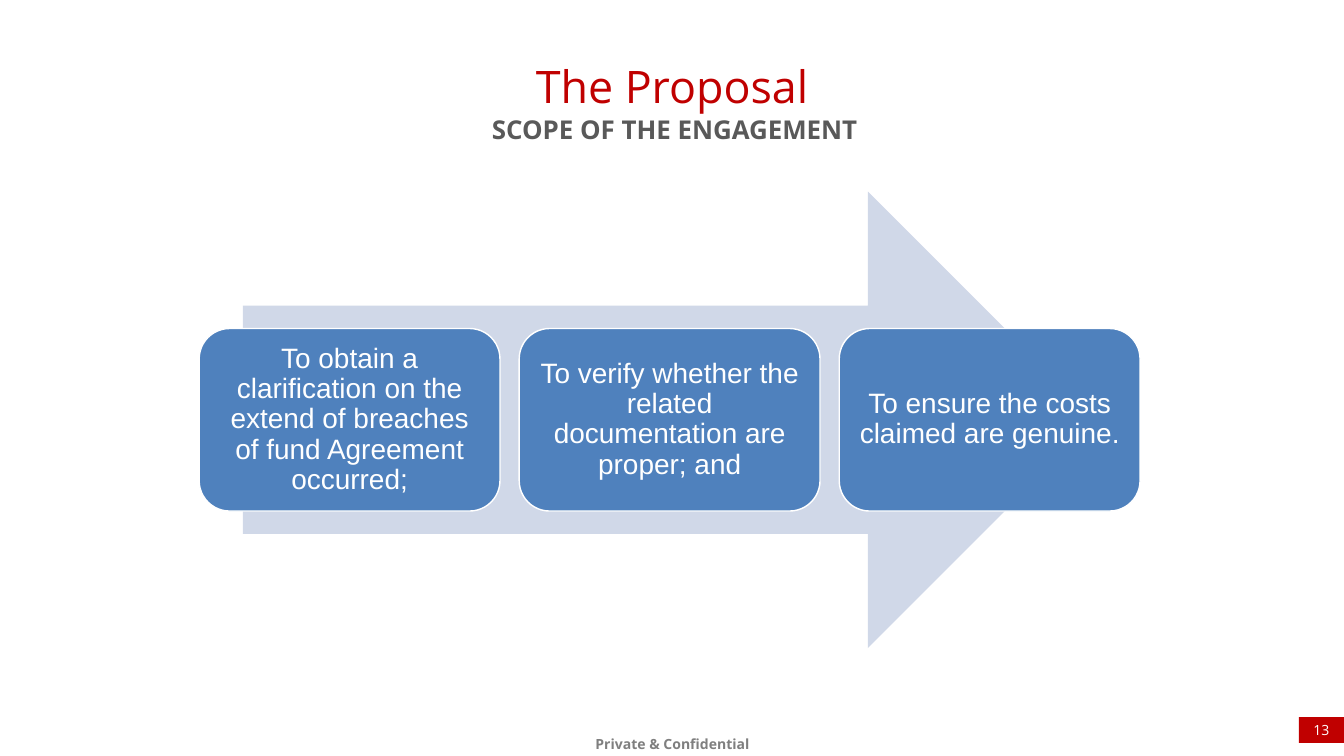
from pptx import Presentation
from pptx.dml.color import RGBColor
from pptx.enum.shapes import MSO_SHAPE
from pptx.enum.text import MSO_ANCHOR, MSO_AUTO_SIZE, PP_ALIGN
from pptx.util import Pt

RECTANGLE = MSO_SHAPE.RECTANGLE
ROUNDED = MSO_SHAPE.ROUNDED_RECTANGLE
RIGHT_ARROW = MSO_SHAPE.RIGHT_ARROW
TOP, MIDDLE = MSO_ANCHOR.TOP, MSO_ANCHOR.MIDDLE
CENTER = PP_ALIGN.CENTER
NO_AUTOFIT = MSO_AUTO_SIZE.NONE


class Theme:
    red = RGBColor(0xC0, 0x00, 0x00)
    dark_gray = RGBColor(0x59, 0x59, 0x59)
    gray = RGBColor(0x7F, 0x7F, 0x7F)
    pale_blue = RGBColor(0xD0, 0xD8, 0xE8)
    blue = RGBColor(0x4F, 0x81, 0xBD)
    white = RGBColor(0xFF, 0xFF, 0xFF)
    heading_font, body_font = "Open Sans", "Arial"
    title_size, subtitle_size = Pt(64), Pt(37)
    step_size, small_size = Pt(40), Pt(20)


def write(box, text, size, color, font=Theme.heading_font, bold=False,
          anchor=TOP, insets=(0, 0), spacing=1.0):
    """Fill a box with one centred paragraph; insets are (sides, top and bottom)."""
    frame = box.text_frame
    frame.word_wrap = True
    frame.auto_size = NO_AUTOFIT
    frame.vertical_anchor = anchor
    frame.margin_left = frame.margin_right = Pt(insets[0])
    frame.margin_top = frame.margin_bottom = Pt(insets[1])
    para = frame.paragraphs[0]
    para.text = text
    para.alignment = CENTER
    para.line_spacing = spacing
    para.font.name = font
    para.font.size = size
    para.font.bold = bold
    para.font.color.rgb = color


def add_block(page, kind, left, top, width, height, fill):
    """Add a filled preset shape without outline or shadow."""
    block = page.shapes.add_shape(kind, Pt(left), Pt(top), Pt(width), Pt(height))
    block.shadow.inherit = False
    block.fill.solid()
    block.fill.fore_color.rgb = fill
    block.line.fill.background()
    return block


deck = Presentation()
deck.slide_width, deck.slide_height = Pt(1920), Pt(1080)
page = deck.slides.add_slide(deck.slide_layouts[5])

# Footer
footer = page.shapes.add_textbox(Pt(830), Pt(1038), Pt(261.4), Pt(56))
write(footer, "Private & Confidential", Theme.small_size, Theme.gray,
      bold=True, insets=(17, 8.6), spacing=1.2)

# Title and subtitle
title = page.shapes.title
title.left, title.top, title.width, title.height = Pt(110), Pt(75), Pt(1700), Pt(97)
write(title, "The Proposal", Theme.title_size, Theme.red, insets=(19.4, 9.4))
subtitle = page.shapes.add_textbox(Pt(113.8), Pt(153.4), Pt(1700), Pt(65))
write(subtitle, "SCOPE OF THE ENGAGEMENT", Theme.subtitle_size, Theme.dark_gray,
      bold=True, insets=(19.4, 9.4))

# Page number
number = add_block(page, RECTANGLE, 1855.4, 1024.6, 64.6, 36.7, Theme.red)
write(number, "13", Theme.small_size, Theme.white, anchor=MIDDLE)

# Arrow behind the steps
add_block(page, RIGHT_ARROW, 347, 273.6, 1219, 652.3, Theme.pale_blue)

# Scope steps
STEPS = [
    "To obtain a clarification on the extend of breaches of fund Agreement occurred;",
    "To verify whether the related documentation are proper; and",
    "To ensure the costs claimed are genuine.",
]
STEP_LEFT, STEP_TOP, STEP_WIDTH, STEP_HEIGHT, STEP_GAP = 284.5, 469.3, 429.8, 260.8, 27.4
for index, text in enumerate(STEPS):
    left = STEP_LEFT + index * (STEP_WIDTH + STEP_GAP)
    step = add_block(page, ROUNDED, left, STEP_TOP, STEP_WIDTH, STEP_HEIGHT, Theme.blue)
    step.line.color.rgb = Theme.white
    step.line.width = Pt(2)
    write(step, text, Theme.step_size, Theme.white, font=Theme.body_font,
          anchor=MIDDLE, insets=(12, 12), spacing=0.9)

deck.save("out.pptx")
